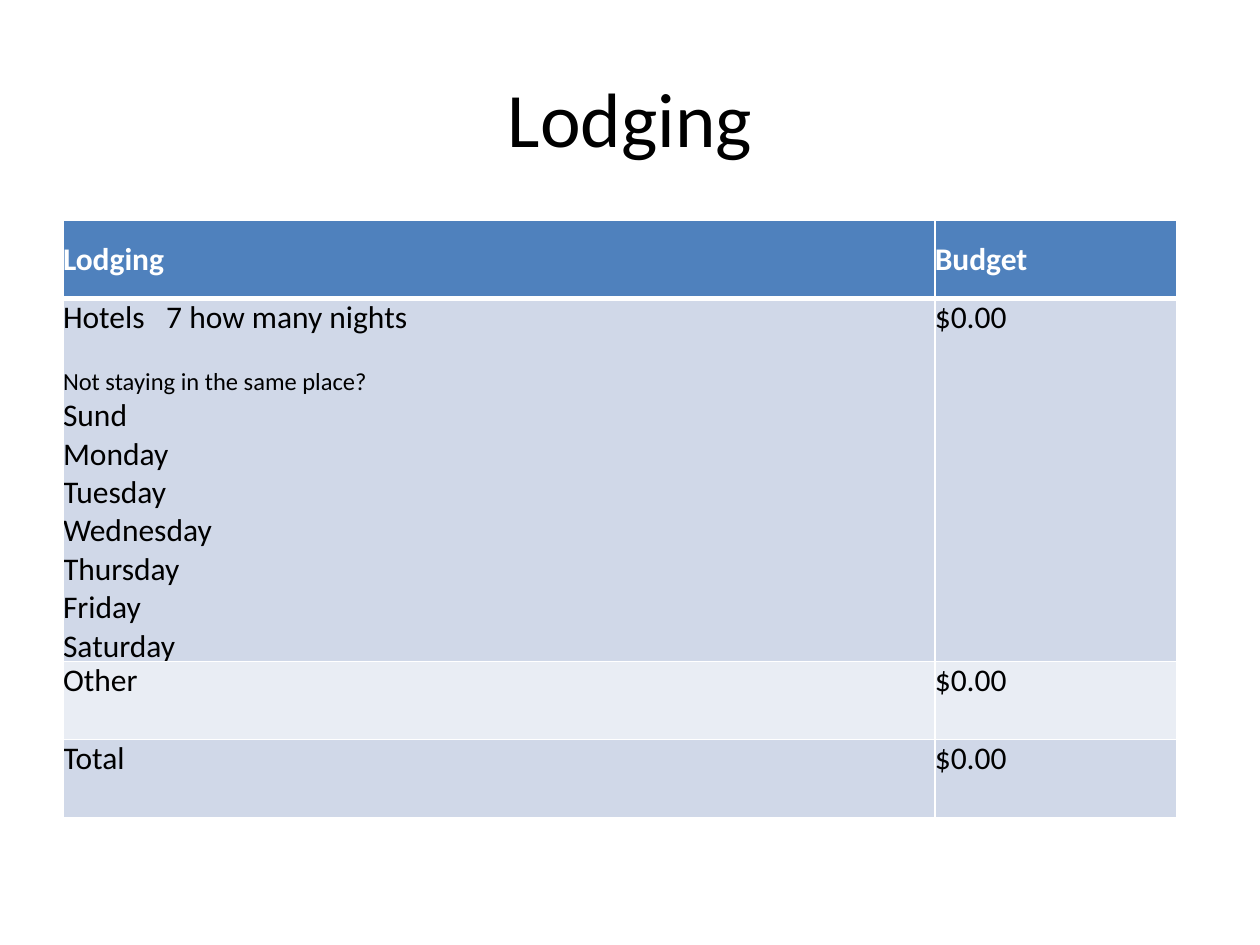
from dataclasses import dataclass

from lxml.etree import SubElement
from pptx import Presentation
from pptx.dml.color import RGBColor
from pptx.enum.text import MSO_ANCHOR, PP_ALIGN
from pptx.oxml import parse_xml
from pptx.oxml.ns import nsdecls, qn
from pptx.util import Pt

FONT = "Calibri"
BLACK, WHITE = "000000", "FFFFFF"
HEADER_FILL, DARK_BAND, LIGHT_BAND = "4F81BD", "D0D8E8", "E9EDF4"
COLUMN_WIDTHS = (498.2, 138)
DAYS = ("Sund", "Monday", "Tuesday", "Wednesday", "Thursday", "Friday", "Saturday")


@dataclass(frozen=True)
class Line:
    text: str
    size: float = 18
    space_after: float = 0
    tab_stop: float = 0


@dataclass(frozen=True)
class BudgetRow:
    lines: tuple[Line, ...]
    amount: str
    fill: str
    height: float = 44.6
    is_header: bool = False
    top_border: float = 1
    bottom_border: float = 1


ROWS = (
    BudgetRow((Line("Lodging"),), "Budget", HEADER_FILL, is_header=True, bottom_border=3),
    BudgetRow(
        (
            Line("Hotels\t7 how many nights", space_after=17, tab_stop=59),
            Line("Not staying in the same place?", size=14),
            *(Line(day) for day in DAYS),
        ),
        "$0.00", DARK_BAND, height=207.5, top_border=3,
    ),
    BudgetRow((Line("Other"),), "$0.00", LIGHT_BAND),
    BudgetRow((Line("Total"),), "$0.00", DARK_BAND),
)


def color(value: str) -> RGBColor:
    return RGBColor.from_string(value)


def write_line(para, line: Line, text_color: str, bold: bool = False) -> None:
    para.text = line.text
    para.space_after = Pt(line.space_after)
    font = para.font
    font.name, font.size, font.bold = FONT, Pt(line.size), bold
    font.color.rgb = color(text_color)
    if line.tab_stop:
        properties = para._p.get_or_add_pPr()
        stops = SubElement(properties, qn("a:tabLst"))
        SubElement(stops, qn("a:tab"), pos=str(Pt(line.tab_stop)), algn="l")
        properties.find(qn("a:defRPr")).addprevious(stops)


def set_borders(cell, row: BudgetRow) -> None:
    widths = {"lnL": 1, "lnR": 1, "lnT": row.top_border, "lnB": row.bottom_border}
    for position, (side, width) in enumerate(widths.items()):
        border = parse_xml(
            f'<a:{side} {nsdecls("a")} w="{Pt(width)}"><a:solidFill>'
            f'<a:srgbClr val="{WHITE}"/></a:solidFill></a:{side}>'
        )
        cell._tc.get_or_add_tcPr().insert(position, border)


def fill_cell(cell, row: BudgetRow, lines: tuple[Line, ...]) -> None:
    cell.margin_left = cell.margin_right = cell.margin_top = cell.margin_bottom = Pt(0)
    cell.vertical_anchor = MSO_ANCHOR.MIDDLE if row.is_header else MSO_ANCHOR.TOP
    cell.fill.solid()
    cell.fill.fore_color.rgb = color(row.fill)
    set_borders(cell, row)
    frame = cell.text_frame
    for index, line in enumerate(lines):
        para = frame.paragraphs[0] if index == 0 else frame.add_paragraph()
        write_line(para, line, WHITE if row.is_header else BLACK, row.is_header)


def add_title(page, text: str) -> None:
    box = page.shapes.add_textbox(Pt(36), Pt(21.6), Pt(648), Pt(90))
    frame = box.text_frame
    frame.word_wrap = True
    frame.vertical_anchor = MSO_ANCHOR.MIDDLE
    para = frame.paragraphs[0]
    write_line(para, Line(text, size=44), BLACK)
    para.alignment = PP_ALIGN.CENTER


def add_budget_table(page, rows: tuple[BudgetRow, ...]) -> None:
    height = sum(row.height for row in rows)
    table = page.shapes.add_table(
        len(rows), len(COLUMN_WIDTHS), Pt(36), Pt(126), Pt(sum(COLUMN_WIDTHS)), Pt(height)
    ).table
    for column, width in zip(table.columns, COLUMN_WIDTHS):
        column.width = Pt(width)
    for index, row in enumerate(rows):
        table.rows[index].height = Pt(row.height)
        fill_cell(table.cell(index, 0), row, row.lines)
        fill_cell(table.cell(index, 1), row, (Line(row.amount),))


def main() -> None:
    deck = Presentation()
    deck.slide_width, deck.slide_height = Pt(720), Pt(540)
    page = deck.slides.add_slide(deck.slide_layouts[6])

    # Heading
    add_title(page, "Lodging")

    # Lodging costs
    add_budget_table(page, ROWS)

    deck.save("out.pptx")


if __name__ == "__main__":
    main()
